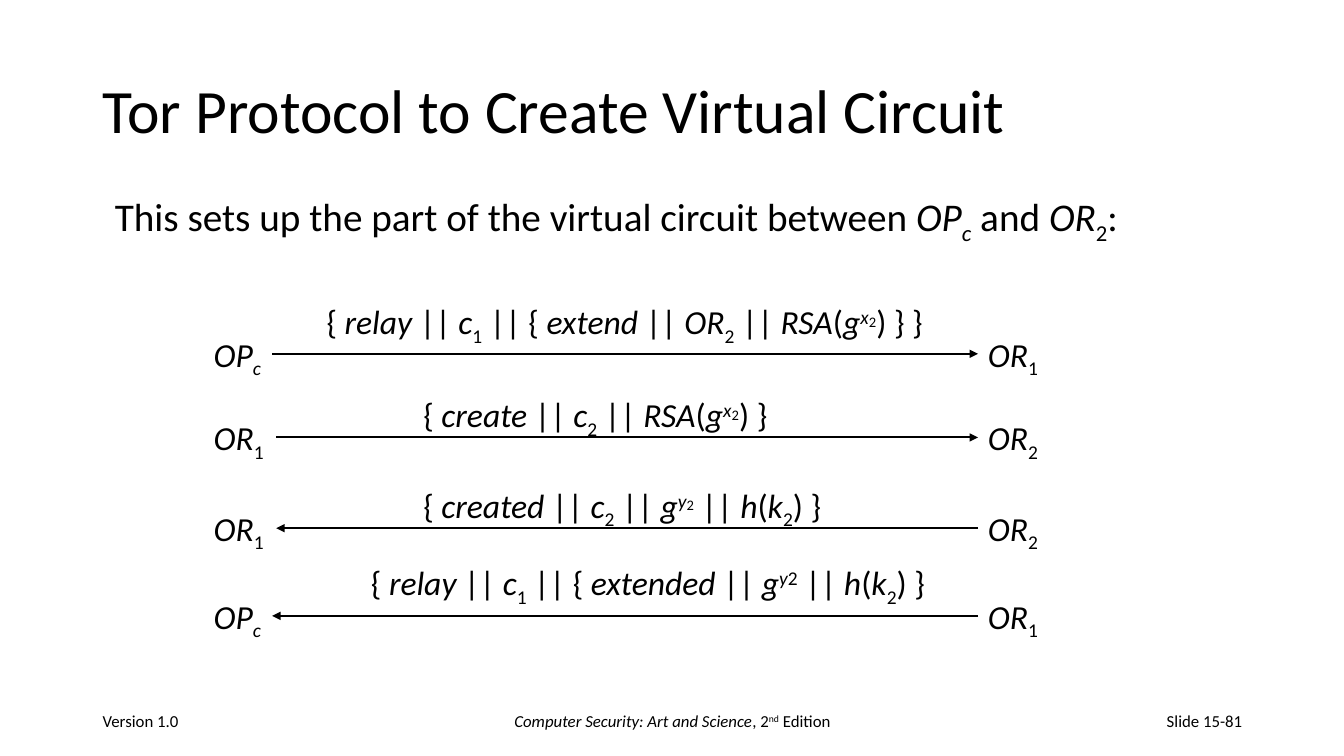
import pptx
import pptx.util
import pptx.dml.color
import pptx.enum.text
import pptx.enum.shapes
import pptx.oxml.ns
from dataclasses import dataclass
from lxml import etree

Inches = pptx.util.Inches
Pt = pptx.util.Pt
Align = pptx.enum.text.PP_ALIGN
Anchor = pptx.enum.text.MSO_ANCHOR
Fit = pptx.enum.text.MSO_AUTO_SIZE


@dataclass(frozen=True)
class Theme:
    font: str = "Calibri"
    ink: str = "000000"
    title: int = 44
    lead: int = 28
    body: int = 24
    small: int = 18
    foot: int = 12
    line: float = 1.5


class Deck:
    def __init__(self, theme):
        self.theme = theme
        self.ink = pptx.dml.color.RGBColor.from_string(theme.ink)
        self.file = pptx.Presentation()
        self.file.slide_width = Inches(13.33)
        self.file.slide_height = Inches(7.5)
        self.slide = self.file.slides.add_slide(self.file.slide_layouts[5])

    def put(self, para, runs, size):
        for text, marks in runs:
            run = para.add_run()
            run.text = text
            font = run.font
            font.name = self.theme.font
            font.size = Pt(self.theme.small if "s" in marks else size)
            font.color.rgb = self.ink
            font.italic = "i" in marks
            for mark, shift in (("_", "-25000"), ("^", "30000")):
                if mark in marks:
                    run._r.get_or_add_rPr().set("baseline", shift)

    def title(self, text, left, top, width, height):
        shape = self.slide.shapes.title
        shape.left, shape.top = Inches(left), Inches(top)
        shape.width, shape.height = Inches(width), Inches(height)
        frame = shape.text_frame
        frame.auto_size = Fit.NONE
        frame.vertical_anchor = Anchor.MIDDLE
        para = frame.paragraphs[0]
        para.alignment = Align.LEFT
        para.line_spacing = 0.9
        self.put(para, [(text, "")], self.theme.title)

    def label(self, runs, left, top, width, height=0.5, size=None):
        box = self.slide.shapes.add_textbox(
            Inches(left), Inches(top), Inches(width), Inches(height))
        frame = box.text_frame
        frame.word_wrap = False
        frame.auto_size = Fit.SHAPE_TO_FIT_TEXT
        self.put(frame.paragraphs[0], runs, size or self.theme.body)

    def footer(self, runs, left, width, align):
        box = self.slide.shapes.add_textbox(
            Inches(left), Inches(6.95), Inches(width), Inches(0.4))
        frame = box.text_frame
        frame.word_wrap = True
        frame.vertical_anchor = Anchor.MIDDLE
        para = frame.paragraphs[0]
        para.alignment = align
        self.put(para, runs, self.theme.foot)

    def arrow(self, start, end, y):
        line = self.slide.shapes.add_connector(
            pptx.enum.shapes.MSO_CONNECTOR.STRAIGHT,
            Inches(start), Inches(y), Inches(end), Inches(y))
        line.line.color.rgb = self.ink
        line.line.width = Pt(self.theme.line)
        name = pptx.oxml.ns.qn
        props = line._element.spPr
        tip = etree.SubElement(props.find(name("a:ln")), name("a:tailEnd"))
        tip.set("type", "triangle")
        etree.SubElement(props, name("a:effectLst"))

    def step(self, y, near, far, sends, message, left, top, width):
        edge, side = 2.02, 9.7
        span = 0.68 if near is CLIENT else 0.72
        self.label(near, edge, y - 0.25, span)
        self.label(far, side, y - 0.25, 0.72)
        ends = (edge + span, side)
        self.arrow(*(ends if sends else ends[::-1]), y)
        self.label(message, left, top, width)


CLIENT = [("OP", "i"), ("c", "i_")]
FIRST = [("OR", "i"), ("1", "_")]
SECOND = [("OR", "i"), ("2", "_")]
BAR = [(" || ", "")]
OPEN = [("{ ", "")]
HASH = [("h", "i"), ("(", ""), ("k", "i"), ("2", "_"), (") }", "")]


def word(text):
    return [(text, "i")]


def chan(digit):
    return [("c", "i"), (digit, "_")]


def power(letter, marks="^s"):
    return [("g", "i"), (letter, "i^"), ("2", marks)]


def cipher(close):
    return word("RSA") + [("(", "")] + power("x") + [(close, "")]


STEPS = [
    (3.51, CLIENT, FIRST, True,
     OPEN + word("relay") + BAR + chan("1") + BAR + OPEN + word("extend")
     + BAR + SECOND + BAR + cipher(") } }"), 3.14, 2.94, 6.21),
    (4.34, FIRST, SECOND, True,
     OPEN + word("create") + BAR + chan("2") + BAR + cipher(") }"),
     4.1, 3.86, 3.68),
    (5.24, FIRST, SECOND, False,
     OPEN + word("created") + BAR + chan("2") + BAR + power("y") + BAR + HASH,
     4.1, 4.76, 4.26),
    (6.11, CLIENT, FIRST, False,
     OPEN + word("relay") + BAR + chan("1") + BAR + OPEN + word("extended")
     + BAR + power("y", "^") + BAR + HASH, 3.58, 5.53, 5.77),
]


def main():
    theme = Theme()
    deck = Deck(theme)
    deck.title("Tor Protocol to Create Virtual Circuit", 0.92, 0.4, 11.5, 1.45)
    lead = [("This sets up the part of the virtual circuit between ", "")]
    deck.label(lead + CLIENT + [(" and ", "")] + SECOND + [(":", "")],
               1.04, 1.86, 10.2, 0.57, theme.lead)
    for step in STEPS:
        deck.step(*step)
    deck.footer([("Version 1.0", "")], 0.92, 3, Align.LEFT)
    book = [("Computer Security: Art and Science", "i"), (", 2", ""),
            ("nd", "^"), (" Edition", "")]
    deck.footer(book, 4.42, 4.5, Align.CENTER)
    deck.footer([("Slide 15-81", "")], 9.42, 3, Align.RIGHT)
    deck.file.save("out.pptx")


if __name__ == "__main__":
    main()
